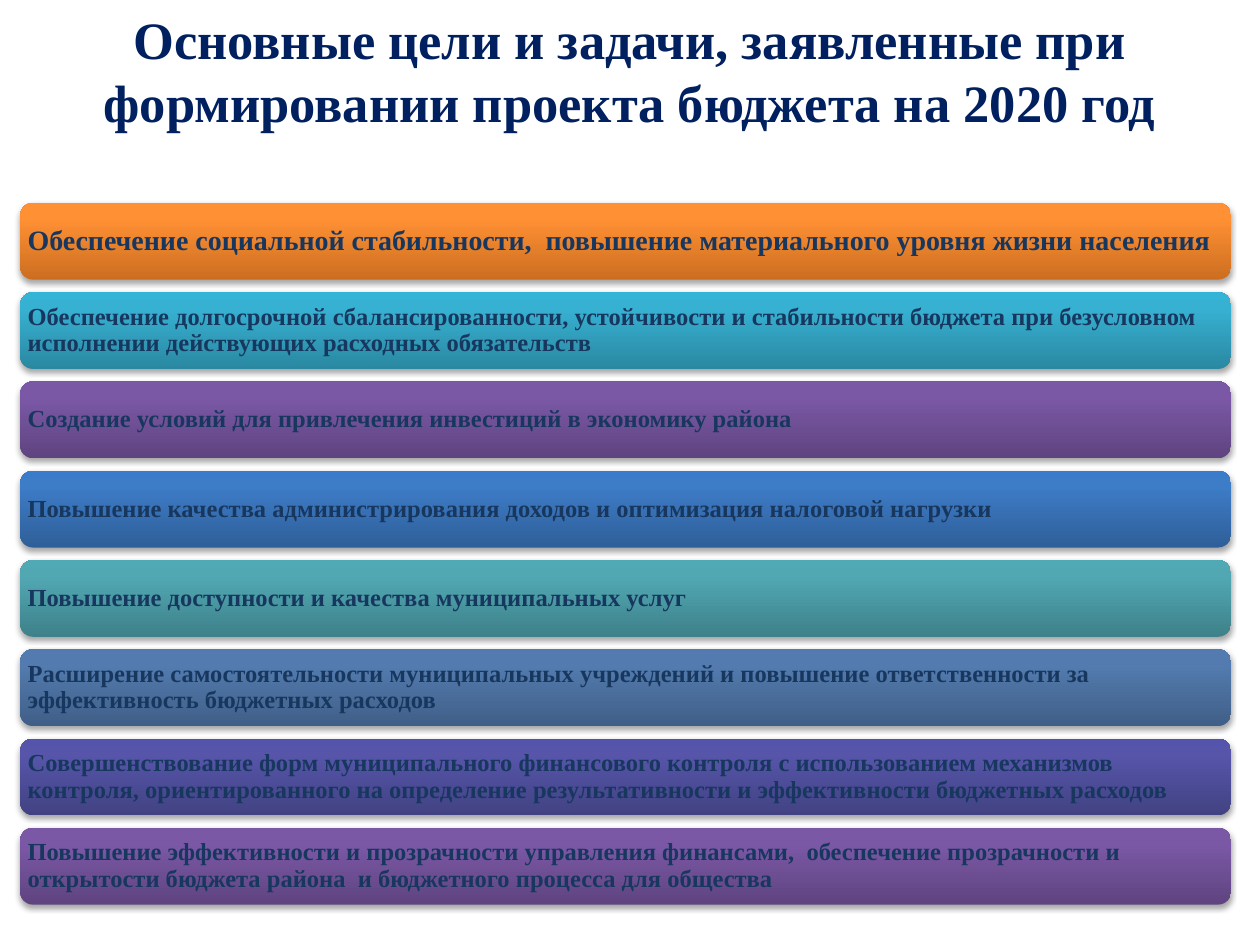
from copy import deepcopy

from lxml.etree import SubElement
from pptx import Presentation
from pptx.dml.color import RGBColor
from pptx.enum.shapes import MSO_SHAPE as Shape
from pptx.enum.text import MSO_ANCHOR as Anchor, PP_ALIGN as Align
from pptx.oxml.ns import qn
from pptx.util import Inches, Pt

FONT = "Times New Roman"
NAVY = RGBColor(0x00, 0x20, 0x60)
INK = RGBColor(0x17, 0x37, 0x5E)


def ramp(*codes):
    return [RGBColor.from_string(code) for code in codes]


# Each ramp runs from the dark bottom edge to the light top edge.
ORANGE = ramp("CC6E20", "FF9034", "FF9136")
CYAN = ramp("2A88A2", "37B1D2", "34B4D6")
PURPLE = ramp("5F4480", "7B58A6", "7C57A8")
BLUE = ramp("2F5F99", "3D7CC7", "3A7CCB")
TEAL = ramp("3E818A", "51A8B3", "4FAAB6")
STEEL = ramp("405F87", "537BAF", "527CB1")
INDIGO = ramp("424283", "5655AA", "5554AD")
STOPS = (0, 0.8, 1)

TITLE = ("Основные цели и задачи, заявленные при\n"
         "формировании проекта бюджета на 2020 год")
GOALS = [
    ("Обеспечение социальной стабильности,  повышение материального "
     "уровня жизни населения", ORANGE, 16),
    ("Обеспечение долгосрочной сбалансированности, устойчивости и "
     "стабильности бюджета при безусловном исполнении действующих "
     "расходных обязательств", CYAN, 14),
    ("Создание условий для привлечения инвестиций в экономику района",
     PURPLE, 14),
    ("Повышение качества администрирования доходов и оптимизация "
     "налоговой нагрузки", BLUE, 14),
    ("Повышение доступности и качества муниципальных услуг", TEAL, 14),
    ("Расширение самостоятельности муниципальных учреждений и повышение "
     "ответственности за эффективность бюджетных расходов", STEEL, 14),
    ("Совершенствование форм муниципального финансового контроля с "
     "использованием механизмов контроля, ориентированного на определение "
     "результативности и эффективности бюджетных расходов", INDIGO, 14),
    ("Повышение эффективности и прозрачности управления финансами,  "
     "обеспечение прозрачности и открытости бюджета района  и бюджетного "
     "процесса для общества", PURPLE, 14),
]

LEFT, WIDTH, HEIGHT = 0.16, 9.61, 0.61
FIRST, LAST = 1.61, 6.57
STEP = (LAST - FIRST) / (len(GOALS) - 1)


def write(frame, text, size, color, align):
    frame.text = text
    frame.word_wrap = True
    frame.vertical_anchor = Anchor.MIDDLE
    for para in frame.paragraphs:
        para.alignment = align
        for run in para.runs:
            font = run.font
            font.name, font.size, font.bold = FONT, Pt(size), True
            font.color.rgb = color


def shade(shape, colors):
    """Fill the shape with a three-stop vertical gradient."""
    fill = shape.fill
    fill.gradient()
    fill.gradient_angle = 90
    stops = shape._element.spPr.find(".//" + qn("a:gsLst"))
    stops.append(deepcopy(stops[-1]))
    for stop, place, color in zip(fill.gradient_stops, STOPS, colors):
        stop.position = place
        stop.color.rgb = color


def drop_shadow(shape):
    shape.shadow.inherit = False
    effects = shape._element.spPr.find(qn("a:effectLst"))
    outer = SubElement(effects, qn("a:outerShdw"), blurRad=str(Pt(3.1)),
                       dist=str(Pt(1.8)), dir="5400000", rotWithShape="0")
    black = SubElement(outer, qn("a:srgbClr"), val="000000")
    SubElement(black, qn("a:alpha"), val="35000")


def add_title(slide):
    box = slide.shapes.add_textbox(0, 0, Inches(10), Inches(1.11))
    write(box.text_frame, TITLE, 30, NAVY, Align.CENTER)


def add_bar(slide, top, text, colors, size):
    bar = slide.shapes.add_shape(Shape.ROUNDED_RECTANGLE, Inches(LEFT),
                                 Inches(top), Inches(WIDTH), Inches(HEIGHT))
    shade(bar, colors)
    bar.line.fill.background()
    drop_shadow(bar)
    frame = bar.text_frame
    # The rounded corners add about 0.03 inch to each margin.
    frame.margin_left = frame.margin_right = Inches(0.03)
    frame.margin_top = frame.margin_bottom = Inches(0.03)
    write(frame, text, size, INK, Align.LEFT)
    frame.paragraphs[0].line_spacing = 0.9


def main():
    deck = Presentation()
    deck.slide_width, deck.slide_height = Inches(10), Inches(7.5)
    slide = deck.slides.add_slide(deck.slide_layouts[6])
    add_title(slide)
    for row, (text, colors, size) in enumerate(GOALS):
        add_bar(slide, FIRST + row * STEP, text, colors, size)
    deck.save("out.pptx")


if __name__ == "__main__":
    main()
